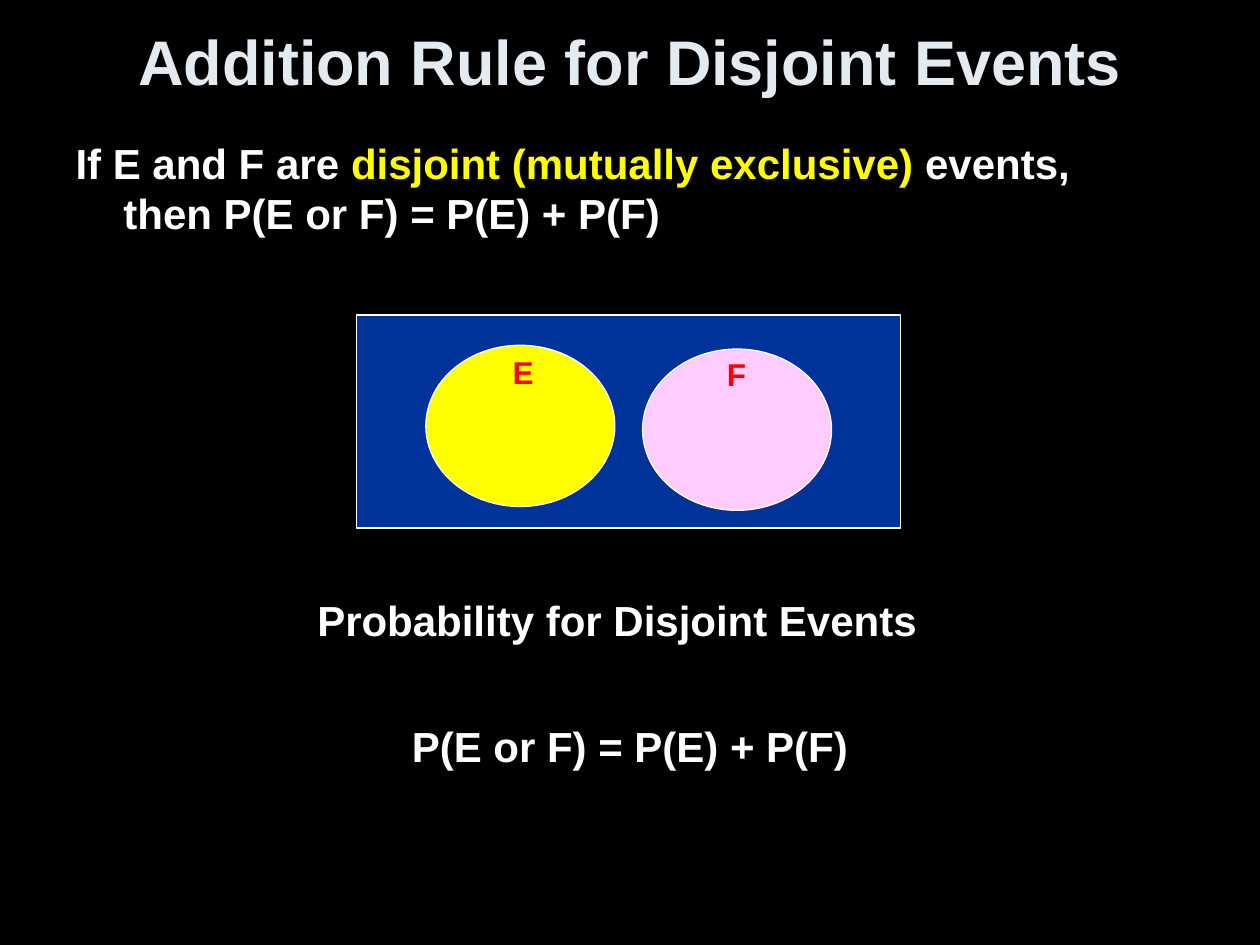
from lxml import etree
from pptx import Presentation
from pptx.dml.color import RGBColor
from pptx.enum import shapes, text
from pptx.oxml.ns import qn
from pptx.util import Inches, Pt

BLACK = RGBColor(0x00, 0x00, 0x00)
WHITE = RGBColor(0xFF, 0xFF, 0xFF)
PALE = RGBColor(0xE3, 0xEB, 0xF1)
YELLOW = RGBColor(0xFF, 0xFF, 0x00)
NAVY = RGBColor(0x00, 0x33, 0x99)
PINK = RGBColor(0xFF, 0xCC, 0xFF)
RED = RGBColor(0xFF, 0x00, 0x00)

TITLE = "Addition Rule for Disjoint Events"
RULE_LINES = [
    [("If E and F are ", WHITE), ("disjoint (mutually exclusive) ", YELLOW),
     ("events, ", WHITE)],
    [("then P(E or F) = P(E) + P(F)", WHITE)],
]
RECT, OVAL = shapes.MSO_SHAPE.RECTANGLE, shapes.MSO_SHAPE.OVAL
VENN = [  # shape, box, fill
    (RECT, (2.83, 2.5, 4.32, 1.69), NAVY),
    (OVAL, (3.38, 2.74, 1.5, 1.28), YELLOW),
    (OVAL, (5.1, 2.77, 1.5, 1.28), PINK),
]
VENN_LABELS = [("E", (3.97, 2.75, 0.37, 0.4)), ("F", (5.67, 2.77, 0.35, 0.4))]
CAPTIONS = [
    ("P(E or F) = P(E) + P(F)", (3.17, 5.67, 3.69, 0.51)),
    ("Probability for Disjoint Events", (2.42, 4.67, 5, 0.51)),
]


def inches(box):
    return [Inches(v) for v in box]


def place(sp, box):
    sp.left, sp.top, sp.width, sp.height = inches(box)


def add_run(p, words, size, color):
    r = p.add_run()
    r.text = words
    for name, value in {"name": "Arial", "size": Pt(size), "bold": True}.items():
        setattr(r.font, name, value)
    r.font.color.rgb = color


def add_label(parent, words, box, size, color):
    tf = parent.add_textbox(*inches(box)).text_frame
    tf.word_wrap = False
    tf.auto_size = text.MSO_AUTO_SIZE.SHAPE_TO_FIT_TEXT
    add_run(tf.paragraphs[0], words, size, color)


prs = Presentation()
prs.slide_width, prs.slide_height = Inches(10), Inches(7.5)
s = prs.slides.add_slide(prs.slide_layouts[1])
s.background.fill.solid()
s.background.fill.fore_color.rgb = BLACK

title, body = s.placeholders
place(title, (0.5, 0.06, 9, 0.83))
place(body, (0.5, 1, 9, 6.08))
for sp, anchor in ((title, text.MSO_ANCHOR.MIDDLE), (body, text.MSO_ANCHOR.TOP)):
    tf = sp.text_frame
    tf.auto_size = text.MSO_AUTO_SIZE.NONE
    tf.vertical_anchor = anchor

p = title.text_frame.paragraphs[0]
p.alignment = text.PP_ALIGN.CENTER
add_run(p, TITLE, 36, PALE)

body.text_frame.margin_top = Inches(0.09)
p = body.text_frame.paragraphs[0]
p.space_before = Pt(0)
pPr = p._p.get_or_add_pPr()
pPr.set("marL", str(Inches(0.38)))
pPr.set("indent", str(-Inches(0.38)))
etree.SubElement(pPr, qn("a:buNone"))
for i, line in enumerate(RULE_LINES):
    if i:
        p.add_line_break()
    for words, color in line:
        add_run(p, words, 24, color)

venn = s.shapes.add_group_shape()
for kind, box, fill in VENN:
    sp = venn.shapes.add_shape(kind, *inches(box))
    sp.shadow.inherit = False
    sp.fill.solid()
    sp.fill.fore_color.rgb = fill
    sp.line.color.rgb = WHITE
    sp.line.width = Pt(0.75)
for words, box in VENN_LABELS:
    add_label(venn.shapes, words, box, 18, RED)

for words, box in CAPTIONS:
    add_label(s.shapes, words, box, 24, WHITE)

prs.save("out.pptx")
